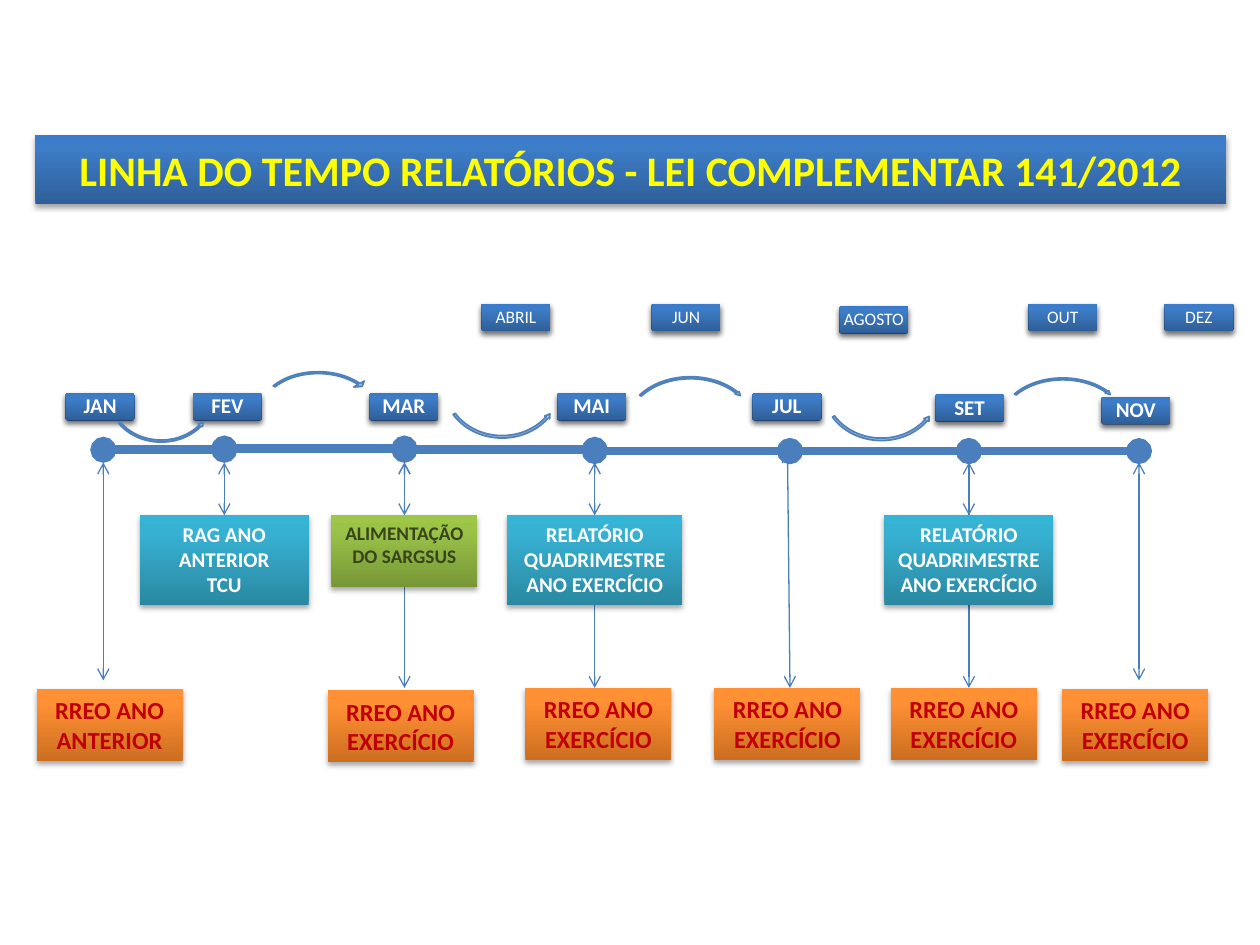
import copy

import pptx
import pptx.dml.color
import pptx.enum.shapes
import pptx.enum.text
import pptx.oxml
import pptx.oxml.ns
import pptx.util

SHAPE = pptx.enum.shapes.MSO_SHAPE
ANCHOR = pptx.enum.text.MSO_ANCHOR
color = pptx.dml.color.RGBColor.from_string
qn = pptx.oxml.ns.qn
NS = pptx.oxml.ns.nsdecls("a")

# Gradients run from the bottom edge upwards
BLUE = ("2F5F99", "3D7CC7", "3A7CCB")
TEAL = ("2A88A2", "37B1D2", "34B4D6")
GREEN = ("779737", "9BC348", "9DC746")
ORANGE = ("CC6E20", "FF9034", "FF9136")

deck = pptx.Presentation()
deck.slide_width = pptx.util.Inches(10)
deck.slide_height = pptx.util.Inches(7.5)
slide = deck.slides.add_slide(deck.slide_layouts[6])

# Grid: 100 columns by 75 rows
COL = deck.slide_width / 100
ROW = deck.slide_height / 75


def panel(left, top, width, height, gradient, text="", size=12, ink="FFFFFF",
          bold=True, kind=SHAPE.RECTANGLE):
    """Add a shaded box with a soft shadow and centred text."""
    box = slide.shapes.add_shape(kind, int(left * COL), int(top * ROW),
                                 int(width * COL), int(height * ROW))
    box.fill.gradient()
    box.fill.gradient_angle = 90
    stops = next(box._element.spPr.iter(qn("a:gsLst")))
    stops.insert(1, copy.deepcopy(stops[0]))
    for stop, position, shade in zip(box.fill.gradient_stops, (0, 0.8, 1), gradient):
        stop.position = position
        stop.color.rgb = color(shade)
    box.line.fill.background()
    box.shadow.inherit = False
    box._element.spPr.find(qn("a:effectLst")).append(pptx.oxml.parse_xml(
        f'<a:outerShdw {NS} blurRad="40000" dist="23000" dir="5400000" rotWithShape="0">'
        '<a:srgbClr val="000000"><a:alpha val="35000"/></a:srgbClr></a:outerShdw>'))
    if text:
        frame = box.text_frame
        frame.text = text
        frame.word_wrap = True
        for paragraph in frame.paragraphs:
            paragraph.alignment = pptx.enum.text.PP_ALIGN.CENTER
            for run in paragraph.runs:
                run.font.name = "Calibri"
                run.font.size = pptx.util.Pt(size)
                run.font.bold = bold
                run.font.color.rgb = color(ink)
    return box


def connect(x1, y1, x2, y2, weight, ends):
    """Add a straight connector with the same marker at both ends."""
    link = slide.shapes.add_connector(
        pptx.enum.shapes.MSO_CONNECTOR.STRAIGHT,
        int(x1 * COL), int(y1 * ROW), int(x2 * COL), int(y2 * ROW))
    link.line.width = pptx.util.Pt(weight)
    link.line.color.rgb = color("4B7EBC")
    outline = link.line._get_or_add_ln()
    for end in ("headEnd", "tailEnd"):
        outline.append(pptx.oxml.parse_xml(f'<a:{end} {NS} type="{ends}"/>'))
    link._element.spPr.append(pptx.oxml.parse_xml(f"<a:effectLst {NS}/>"))
    return link


# Title
title = panel(2.8, 10.7, 94.5, 5.5, BLUE,
              "LINHA DO TEMPO RELATÓRIOS - LEI COMPLEMENTAR 141/2012", 24, "FFFF00")
title.text_frame.vertical_anchor = ANCHOR.MIDDLE

# Columns of the milestones
JAN, FEV, MAR, MAI, JUL, SET, NOV = 8.2, 17.8, 32.1, 47.2, 62.7, 76.9, 90.4
AXIS, ARROW_TOP, REPORT_TOP = 35.8, 36.7, 40.9

# Long arrows passing behind the reports
for x, top in ((MAI, AXIS), (MAR, ARROW_TOP), (SET, AXIS)):
    connect(x, top, x, 54.6, 0.75, "arrow")

# Timeline
for start, end, y in ((FEV, MAR, 35.6), (MAR, MAI, 35.7), (MAI, JUL, AXIS),
                      (JUL, SET, AXIS), (SET, NOV, AXIS), (JAN, FEV, 35.7)):
    connect(start, y, end, y, 5, "oval")

# Reports hung from the timeline
QUARTERLY = "RELATÓRIO QUADRIMESTRE\nANO EXERCÍCIO"
for x, width, height, gradient, text, size, ink in (
        (FEV, 13.4, 7.1, TEAL, "RAG ANO ANTERIOR\nTCU", 12, "FFFFFF"),
        (MAR, 11.6, 5.7, GREEN, "ALIMENTAÇÃO DO SARGSUS", 11, "37441C"),
        (MAI, 13.9, 7.1, TEAL, QUARTERLY, 12, "FFFFFF"),
        (SET, 13.4, 7.1, TEAL, QUARTERLY, 12, "FFFFFF")):
    report = panel(x - width / 2, REPORT_TOP, width, height, gradient, text, size, ink)
    report.text_frame.vertical_anchor = ANCHOR.TOP
    report.text_frame.auto_size = pptx.enum.text.MSO_AUTO_SIZE.SHAPE_TO_FIT_TEXT
    drop = connect(x, ARROW_TOP, x, REPORT_TOP, 0.75, "arrow")
    drop.end_connect(report, 0)

# RREO boxes
for left, top, year in ((2.9, 54.7, "ANTERIOR"), (26, 54.8, "EXERCÍCIO"),
                        (41.7, 54.6, "EXERCÍCIO"), (56.7, 54.6, "EXERCÍCIO"),
                        (70.7, 54.6, "EXERCÍCIO"), (84.3, 54.7, "EXERCÍCIO")):
    rreo = panel(left, top, 11.6, 5.7, ORANGE, f"RREO ANO {year}", 14, "C00000")
    rreo.text_frame.vertical_anchor = ANCHOR.TOP
    rreo.text_frame.auto_size = pptx.enum.text.MSO_AUTO_SIZE.SHAPE_TO_FIT_TEXT

# Arrows reaching the RREO boxes directly
connect(JAN, ARROW_TOP, JAN, 54, 0.75, "arrow")
connect(62.5, AXIS, JUL, 54.6, 0.75, "arrow")
connect(NOV, ARROW_TOP, NOV, 54, 0.75, "arrow")

# Month tags: milestones in bold, the months between them above
for month, left, top, milestone in (
        ("JAN", 5.2, 31.2, True), ("FEV", 15.3, 31.2, True),
        ("MAR", 29.3, 31.2, True), ("MAI", 44.2, 31.2, True),
        ("JUL", 59.7, 31.2, True), ("AGOSTO", 66.6, 24.3, False),
        ("SET", 74.2, 31.3, True), ("OUT", 81.6, 24.1, False),
        ("NOV", 87.4, 31.5, True), ("DEZ", 92.4, 24.1, False),
        ("ABRIL", 38.2, 24.1, False), ("JUN", 51.7, 24.1, False)):
    plate = panel(left, top, 5.5, 2.2, BLUE, kind=SHAPE.ROUNDED_RECTANGLE)
    plate.adjustments[0] = 0.1
    tag = panel(left + 0.05, top + 0.05, 5.4, 2.1, BLUE, month,
                12 if milestone else 10, bold=milestone)
    label = tag.text_frame
    label.vertical_anchor = ANCHOR.MIDDLE
    label.margin_left = label.margin_right = pptx.util.Inches(0.02)
    label.margin_top = label.margin_bottom = pptx.util.Inches(0.01)
    label.paragraphs[0].line_spacing = 0.9

# Curved arrows from one milestone to the next
OVER = (SHAPE.CIRCULAR_ARROW, 0.021, 2.476, 195.769, 125.755)
UNDER = (SHAPE.LEFT_CIRCULAR_ARROW, 0.023, 2.803, 20.558, 90.245)
for (kind, *angles), left, top, width, height, head in (
        (OVER, 20.2, 29.1, 10.1, 7.1, 0.067),
        (UNDER, 35.1, 26.5, 9.5, 8.4, 0.027),
        (OVER, 49.6, 29.8, 10.4, 7.7, 0.024),
        (UNDER, 65.2, 26.7, 9.5, 8.4, 0.027),
        (OVER, 79.3, 29.9, 10.1, 7.1, 0.024),
        (UNDER, 8.6, 28.1, 8.4, 7.1, 0.027)):
    curve = slide.shapes.add_shape(kind, int(left * COL), int(top * ROW),
                                   int(width * COL), int(height * ROW))
    for index, value in enumerate((*angles, head)):
        curve.adjustments[index] = value
    curve.fill.solid()
    curve.fill.fore_color.rgb = color("B3C1DB")
    curve.line.color.rgb = color("4F81BD")
    curve.line.width = pptx.util.Pt(1)
    curve.shadow.inherit = False

deck.save("out.pptx")
